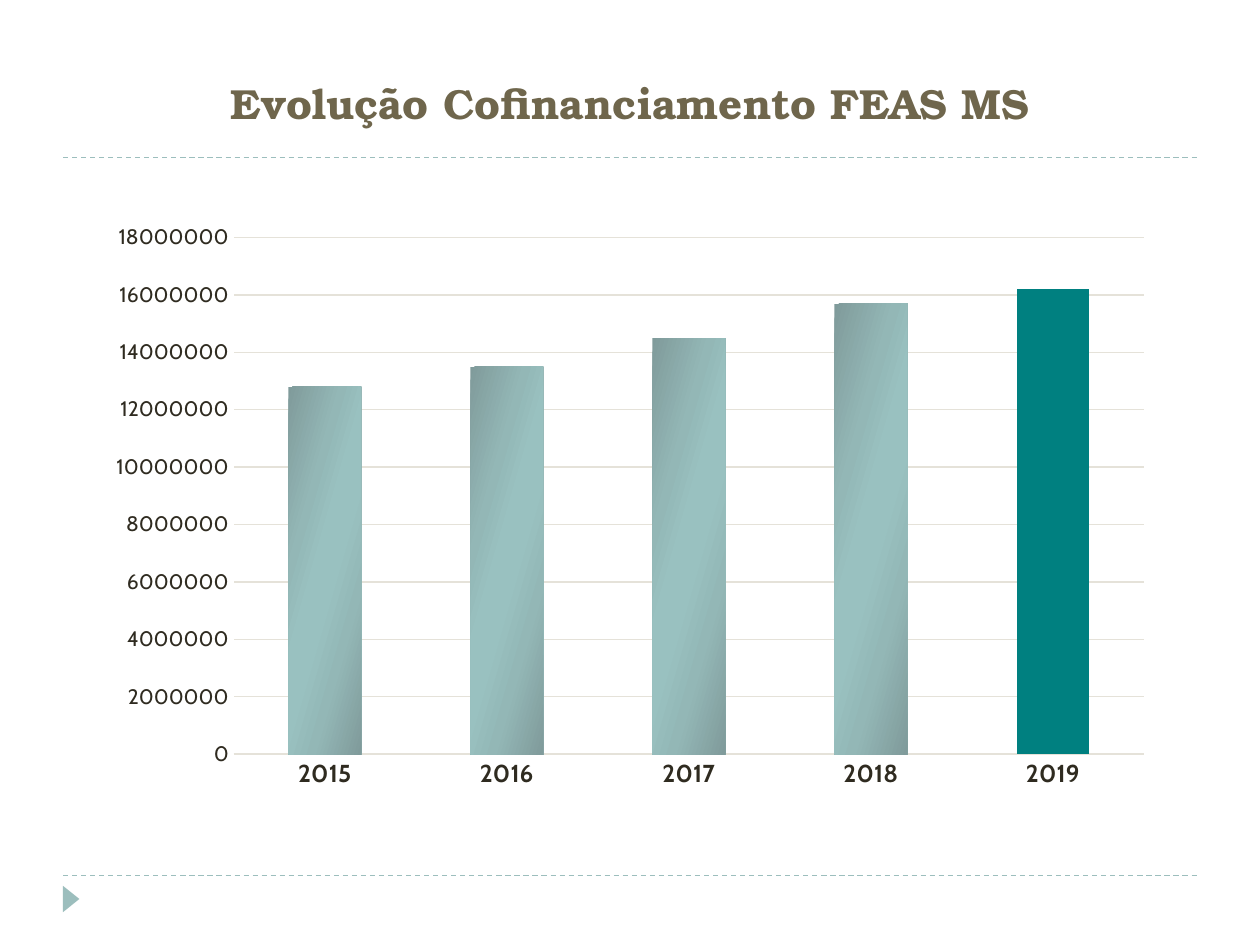
from lxml import etree
from pptx import Presentation
from pptx import util as u
from pptx.chart import data
from pptx.dml import color
from pptx.enum import chart as charts, dml, shapes, text
from pptx.oxml import parse_xml
from pptx.oxml.ns import nsdecls, qn

Pt = u.Pt
TEAL, INK, GRID = "9CBEBD", "2F2B20", "E5E2D9"


def rgb(value):
    return color.RGBColor.from_string(value)


def write(target, content=None, *, font="Cabin", size=12, fill=INK, bold=False):
    """Format a title's or axis' font, after setting its text if any is given."""
    if content is not None:
        target.text = content
        target = target.paragraphs[0].runs[0]
    target.font.name = font
    target.font.size = Pt(size)
    target.font.bold = bold
    target.font.color.rgb = rgb(fill)


presentation = Presentation()
presentation.slide_width, presentation.slide_height = Pt(720), Pt(540)
slide = presentation.slides.add_slide(presentation.slide_layouts[5])

# Dashed rules under the title and above the footer
for y in (90, 500.4):
    rule = slide.shapes.add_connector(
        shapes.MSO_CONNECTOR.STRAIGHT, Pt(36), Pt(y), Pt(684), Pt(y))
    rule.line.color.rgb = rgb(TEAL)
    rule.line.width = Pt(0.75)
    rule.line.dash_style = dml.MSO_LINE.DASH
    etree.SubElement(rule._element.spPr, qn("a:effectLst"))

# Footer marker
marker = slide.shapes.add_shape(
    shapes.MSO_SHAPE.ISOSCELES_TRIANGLE, Pt(33.1), Pt(509), Pt(15.1), Pt(9.4))
marker.rotation = 90
marker.shadow.inherit = False
marker.fill.solid()
marker.fill.fore_color.rgb = rgb(TEAL)
marker.line.fill.background()

# Title
title = slide.shapes.title
title.left, title.top, title.width, title.height = Pt(36), Pt(21.6), Pt(648), Pt(55.4)
frame = title.text_frame
write(frame, "Evolução Cofinanciamento FEAS MS",
      font="TeX Gyre Bonum", size=24, fill="6F664C", bold=True)
frame.word_wrap = True
frame.auto_size = text.MSO_AUTO_SIZE.NONE
frame.vertical_anchor = text.MSO_ANCHOR.BOTTOM
frame.paragraphs[0].alignment = text.PP_ALIGN.CENTER

# Column chart
chart_data = data.CategoryChartData()
chart_data.categories = ["2015", "2016", "2017", "2018", "2019"]
chart_data.add_series("Series 1", [12800000, 13500000, 14500000, 15700000, 16200000])
chart = slide.shapes.add_chart(
    charts.XL_CHART_TYPE.COLUMN_STACKED,
    Pt(54), Pt(122.4), Pt(612), Pt(335.5), chart_data).chart
write(chart, size=10)
chart.has_legend = False
chart.has_title = False
plot = chart.plots[0]
plot.gap_width, plot.overlap = 150, 100
plot.vary_by_categories = False

# Axes
category_axis, value_axis = chart.category_axis, chart.value_axis
write(category_axis.tick_labels, size=14, bold=True)
write(value_axis.tick_labels, size=12)
for axis in (category_axis, value_axis):
    axis.major_tick_mark = axis.minor_tick_mark = charts.XL_TICK_MARK.NONE
category_axis.format.line.color.rgb = rgb(GRID)
category_axis.format.line.width = Pt(1)
value_axis.format.line.fill.background()
value_axis.minimum_scale, value_axis.maximum_scale = 0, 18000000
value_axis.major_unit = 2000000
value_axis.tick_labels.number_format = "General"
value_axis.tick_labels.number_format_is_linked = False
value_axis.has_major_gridlines = True
value_axis.major_gridlines.format.line.color.rgb = rgb(GRID)
value_axis.major_gridlines.format.line.width = Pt(0.75)

# Inner plot area, as fractions of the chart
plot_area = chart._chartSpace.chart.plotArea
for old_layout in plot_area.findall(qn("c:layout")):
    plot_area.remove(old_layout)
sizes = "".join(f'<c:{name} val="{value}"/>' for name, value in
                (("x", 0.13), ("y", 0.04), ("w", 0.85), ("h", 0.88)))
plot_area.insert(0, parse_xml(
    f'<c:layout {nsdecls("c")}><c:manualLayout><c:layoutTarget val="inner"/>'
    f'<c:xMode val="edge"/><c:yMode val="edge"/>{sizes}</c:manualLayout></c:layout>'))

# Gradient columns, with the last year highlighted
series = plot.series[0]
series.invert_if_negative = False
series.format.fill.gradient()
gradient = series._element.find(qn("c:spPr")).find(qn("a:gradFill"))
stops = ((0, "809B9B"), (30, "93B7B6"), (45, "99C1C0"),
         (55, "99C1C0"), (73, "93B7B6"), (100, "809B9B"))
stop_xml = "".join(f'<a:gs pos="{position * 1000}"><a:srgbClr val="{value}"/></a:gs>'
                   for position, value in stops)
gradient.getparent().replace(gradient, parse_xml(
    f'<a:gradFill {nsdecls("a")} rotWithShape="1"><a:gsLst>{stop_xml}</a:gsLst>'
    f'<a:lin ang="{16 * 60000}" scaled="0"/></a:gradFill>'))
highlight = series.points[4].format.fill
highlight.solid()
highlight.fore_color.rgb = rgb("008080")

presentation.save("out.pptx")
